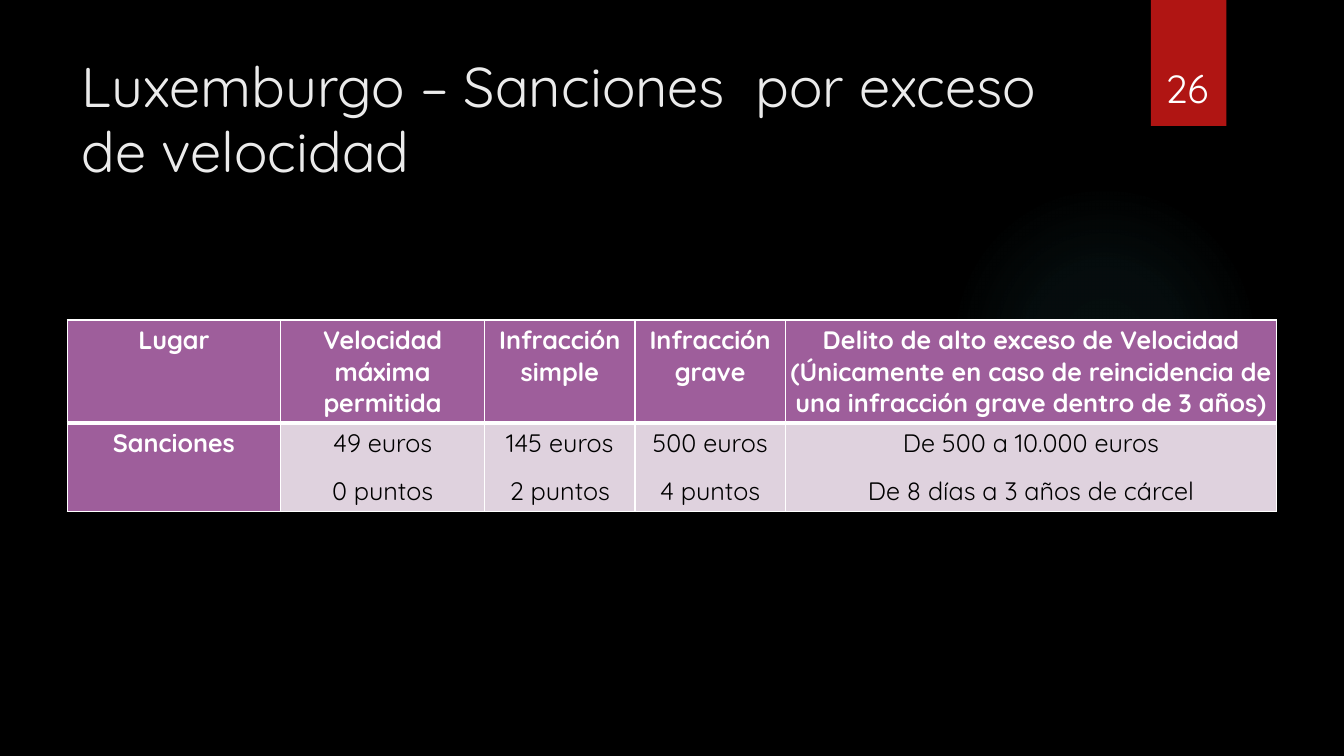
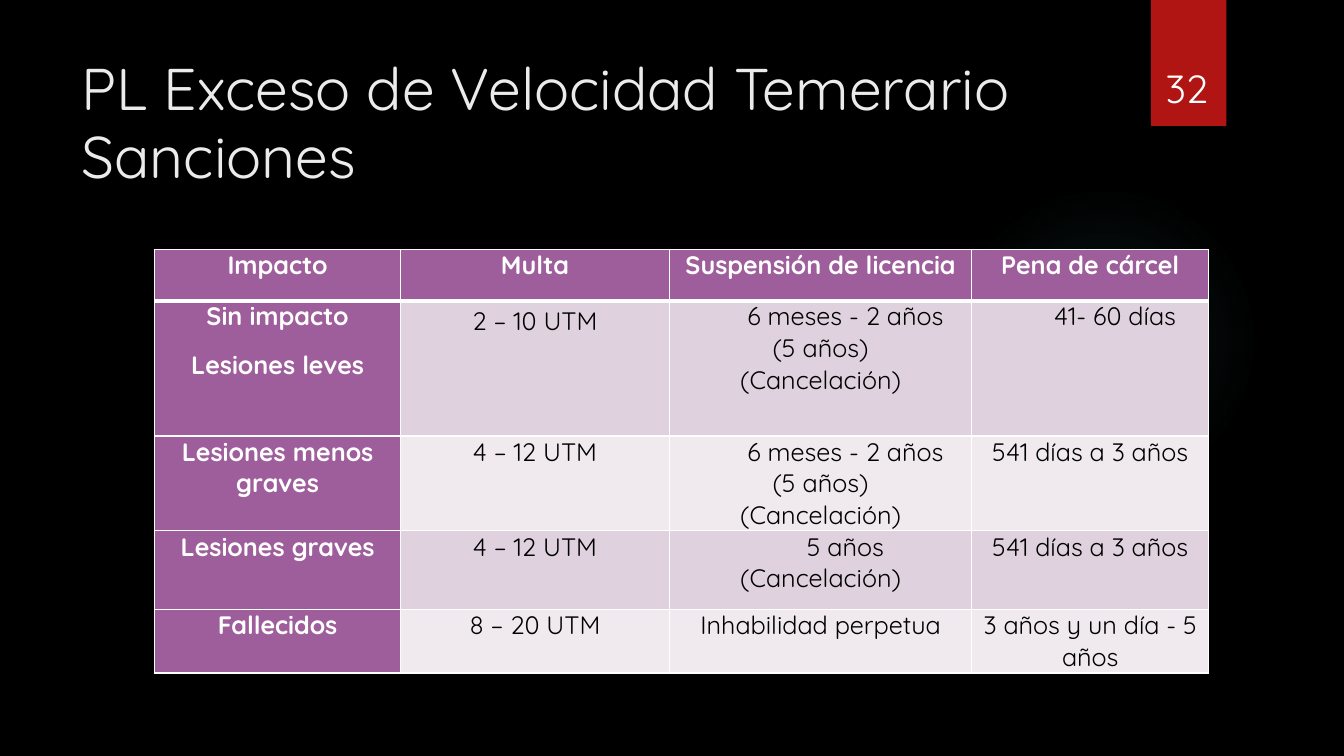
from dataclasses import dataclass

from lxml import etree
from pptx import Presentation
from pptx.dml.color import RGBColor
from pptx.enum.shapes import MSO_SHAPE
from pptx.enum.text import MSO_ANCHOR, MSO_AUTO_SIZE, PP_ALIGN
from pptx.oxml.ns import qn
from pptx.util import Emu, Inches, Pt

# The slide is a grid of 160 columns by 90 rows, each unit 1/12 inch.
GRID_COLUMNS, GRID_ROWS = 160, 90
UNIT = Inches(1) / 12

FONT = "Quicksand"
TITLE_ONLY = 5

BLACK = RGBColor(0x00, 0x00, 0x00)
WHITE = RGBColor(0xFF, 0xFF, 0xFF)
TITLE_GREY = RGBColor(0xEB, 0xEB, 0xEB)
BADGE_RED = RGBColor(0xB0, 0x15, 0x13)
GLOW_TEAL = RGBColor(0x50, 0xB9, 0xC1)
PURPLE = RGBColor(0x9E, 0x5E, 0x9B)
BANDS = (RGBColor(0xDF, 0xD2, 0xDE), RGBColor(0xF0, 0xEA, 0xEF))

GLOW_STOPS = ((0, 7), (36, 6), (69, 0))  # position and opacity, in percent
THIN, THICK = Pt(1), Pt(3)
FIRST_LINE_INDENT = 5.9


@dataclass(frozen=True)
class Box:
    left: float
    top: float
    width: float
    height: float

    def emu(self) -> tuple[Emu, Emu, Emu, Emu]:
        return (units(self.left), units(self.top),
                units(self.width), units(self.height))


@dataclass(frozen=True)
class Entry:
    """Table text: one string per paragraph, with optional layout changes."""
    paragraphs: tuple[str, ...]
    indent: float = 0
    drop: float = 0


@dataclass(frozen=True)
class Grid:
    left: float
    top: float
    columns: tuple[float, ...]
    rows: tuple[float, ...]
    inset_x: float
    inset_y: float
    entries: tuple[tuple[Entry, ...], ...]


@dataclass(frozen=True)
class Page:
    number: int
    title: str
    title_size: int
    title_width: float
    grid: Grid


GLOW = Box(113, 22, 37, 37)
BADGE = Box(137, 0, 9, 15)
PAGE_NUMBER = Box(135.8, 3.9, 11, 10)


def entry(*paragraphs: str) -> Entry:
    return Entry(paragraphs)


def indented(text: str) -> Entry:
    return Entry((text,), indent=FIRST_LINE_INDENT)


LUXEMBURGO = Page(
    26, "Luxemburgo – Sanciones  por exceso de velocidad", 40, 123.5,
    Grid(
        8, 38.1, (25.4, 24.3, 17.9, 17.9, 58.5), (12.1, 10.4), 0.5, 0.5,
        (
            (entry("Lugar"), entry("Velocidad máxima permitida"),
             entry("Infracción simple"), entry("Infracción grave"),
             entry("Delito de alto exceso de Velocidad (Únicamente en caso "
                   "de reincidencia de una infracción grave dentro de 3 años)")),
            (entry("Sanciones"), entry("49 euros", "0 puntos"),
             entry("145 euros", "2 puntos"), entry("500 euros", "4 puntos"),
             entry("De 500 a 10.000 euros", "De 8 días a 3 años de cárcel")),
        ),
    ),
)

SUSPENSION = indented("6 meses - 2 años\n(5 años)\n(Cancelación)")
PROYECTO_LEY = Page(
    32, "PL Exceso de Velocidad Temerario Sanciones", 42, 129.5,
    Grid(
        18.4, 29.7, (29.3, 32, 36, 28.2), (6.1, 16.1, 11.3, 9.4, 7.5), 0.85, 0,
        (
            (entry("Impacto"), entry("Multa"),
             entry("Suspensión de licencia"), entry("Pena de cárcel")),
            (entry("Sin impacto", "Lesiones leves"),
             Entry(("2 – 10 UTM",), drop=0.6),
             SUSPENSION, indented("41- 60 días")),
            (entry("Lesiones menos graves"), entry("4 – 12 UTM"),
             SUSPENSION, entry("541 días a 3 años")),
            (entry("Lesiones graves"), entry("4 – 12 UTM"),
             indented("5 años\n(Cancelación)"), entry("541 días a 3 años")),
            (entry("Fallecidos"), entry("8 – 20 UTM"),
             entry("Inhabilidad perpetua"), entry("3 años y un día - 5 años")),
        ),
    ),
)


def units(count: float) -> Emu:
    return Emu(round(count * UNIT))


def style_font(paragraph, size: int, color: RGBColor, bold: bool = False) -> None:
    font = paragraph.font
    font.name, font.size, font.bold = FONT, Pt(size), bold
    font.color.rgb = color


def add_plain_shape(slide, kind: MSO_SHAPE, box: Box, color: RGBColor):
    shape = slide.shapes.add_shape(kind, *box.emu())
    shape.shadow.inherit = False
    shape.line.fill.background()
    shape.fill.solid()
    shape.fill.fore_color.rgb = color
    return shape


def add_glow(slide) -> None:
    """Add the faint round light, fading out from its centre."""
    glow = add_plain_shape(slide, MSO_SHAPE.OVAL, GLOW, GLOW_TEAL)
    solid = glow.element.spPr.find(qn("a:solidFill"))
    gradient = etree.Element(qn("a:gradFill"), rotWithShape="1")
    stops = etree.SubElement(gradient, qn("a:gsLst"))
    for position, opacity in GLOW_STOPS:
        stop = etree.SubElement(stops, qn("a:gs"), pos=str(position * 1000))
        color = etree.SubElement(stop, qn("a:srgbClr"), val=str(GLOW_TEAL))
        etree.SubElement(color, qn("a:alpha"), val=str(opacity * 1000))
    circle = etree.SubElement(gradient, qn("a:path"), path="circle")
    etree.SubElement(circle, qn("a:fillToRect"),
                     dict.fromkeys(("l", "t", "r", "b"), "50000"))
    solid.getparent().replace(solid, gradient)


def add_page_number(slide, number: int) -> None:
    add_plain_shape(slide, MSO_SHAPE.RECTANGLE, BADGE, BADGE_RED)
    frame = slide.shapes.add_textbox(*PAGE_NUMBER.emu()).text_frame
    frame.word_wrap = True
    frame.vertical_anchor = MSO_ANCHOR.BOTTOM
    paragraph = frame.paragraphs[0]
    paragraph.text = str(number)
    paragraph.alignment = PP_ALIGN.CENTER
    style_font(paragraph, 28, WHITE)


def format_title(slide, page: Page) -> None:
    title = slide.shapes.title
    box = Box(8.5, 6, page.title_width, 18.4)
    title.left, title.top, title.width, title.height = box.emu()
    frame = title.text_frame
    frame.word_wrap = True
    frame.auto_size = MSO_AUTO_SIZE.NONE
    frame.vertical_anchor = MSO_ANCHOR.TOP
    paragraph = frame.paragraphs[0]
    paragraph.text = page.title
    paragraph.alignment = PP_ALIGN.LEFT
    paragraph.line_spacing = 0.97
    style_font(paragraph, page.title_size, TITLE_GREY)


def set_borders(cell, top: Pt, bottom: Pt) -> None:
    properties = cell._tc.get_or_add_tcPr()
    for side, width in (("L", THIN), ("R", THIN), ("T", top), ("B", bottom)):
        line = etree.SubElement(properties, qn(f"a:ln{side}"), w=str(width))
        fill = etree.SubElement(line, qn("a:solidFill"))
        etree.SubElement(fill, qn("a:srgbClr"), val=str(WHITE))


def fill_cell(cell, content: Entry, grid: Grid, row: int, column: int) -> None:
    is_heading = row == 0 or column == 0
    set_borders(cell, top=THICK if row == 1 else THIN,
                bottom=THICK if row == 0 else THIN)
    cell.fill.solid()
    cell.fill.fore_color.rgb = PURPLE if is_heading else BANDS[(row - 1) % 2]
    cell.margin_left = cell.margin_right = units(grid.inset_x)
    cell.margin_top = units(grid.inset_y + content.drop)
    cell.margin_bottom = units(grid.inset_y)
    frame = cell.text_frame
    for index, text in enumerate(content.paragraphs):
        paragraph = frame.add_paragraph() if index else frame.paragraphs[0]
        paragraph.text = text
        paragraph.alignment = PP_ALIGN.CENTER
        if index:
            paragraph.space_before = Pt(12)
        if content.indent:
            paragraph._p.get_or_add_pPr().set("indent", str(units(content.indent)))
        style_font(paragraph, 18, WHITE if is_heading else BLACK, is_heading)


def add_grid(slide, grid: Grid) -> None:
    box = Box(grid.left, grid.top, sum(grid.columns), sum(grid.rows))
    table = slide.shapes.add_table(
        len(grid.rows), len(grid.columns), *box.emu()).table
    for column, width in zip(table.columns, grid.columns):
        column.width = units(width)
    for row, height in zip(table.rows, grid.rows):
        row.height = units(height)
    for row, entries in enumerate(grid.entries):
        for column, content in enumerate(entries):
            fill_cell(table.cell(row, column), content, grid, row, column)


def add_page(presentation, page: Page) -> None:
    slide = presentation.slides.add_slide(presentation.slide_layouts[TITLE_ONLY])
    slide.background.fill.solid()
    slide.background.fill.fore_color.rgb = BLACK
    add_glow(slide)
    format_title(slide, page)
    add_grid(slide, page.grid)
    add_page_number(slide, page.number)


def main() -> None:
    presentation = Presentation()
    presentation.slide_width = units(GRID_COLUMNS)
    presentation.slide_height = units(GRID_ROWS)
    for page in (LUXEMBURGO, PROYECTO_LEY):
        add_page(presentation, page)
    presentation.save("out.pptx")


if __name__ == "__main__":
    main()
